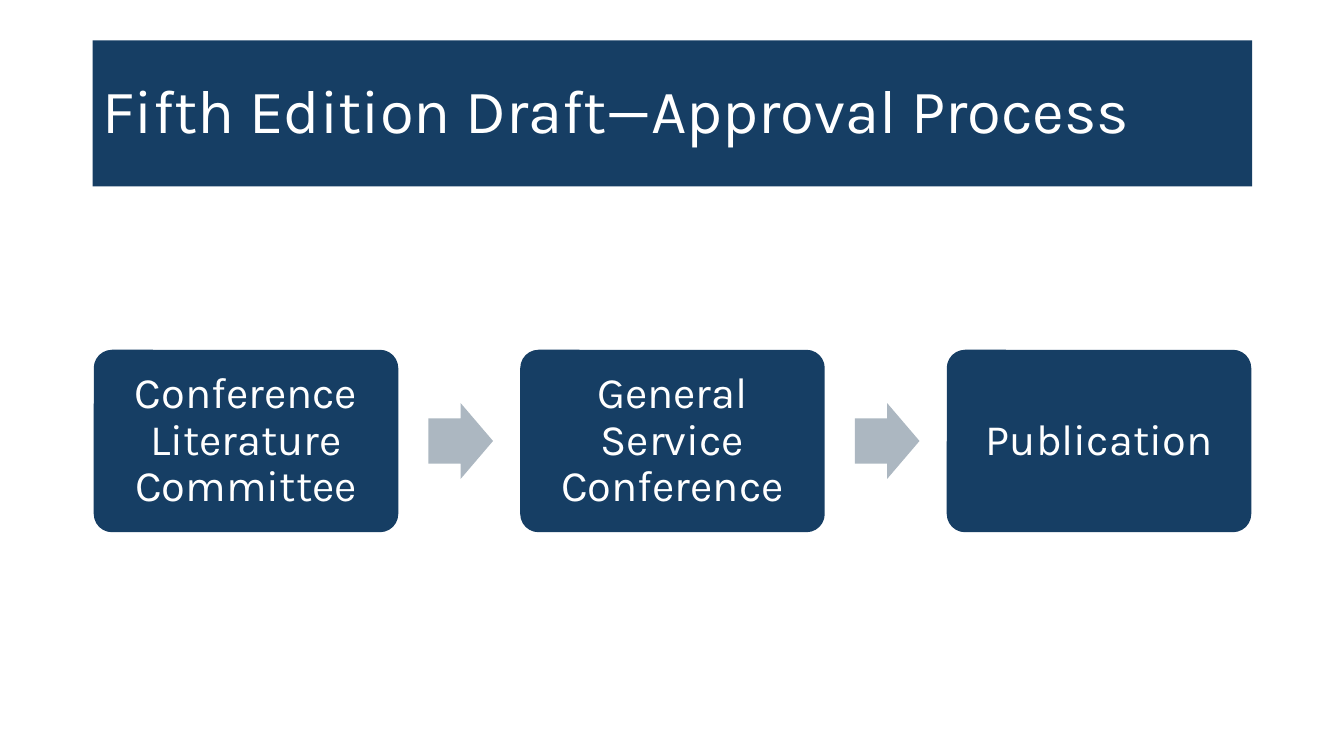
from dataclasses import dataclass

from pptx import Presentation
from pptx.dml.color import RGBColor
from pptx.enum.shapes import MSO_SHAPE
from pptx.enum.text import MSO_ANCHOR, PP_ALIGN
from pptx.util import Emu, Pt

RECT, ROUNDED, ARROW = MSO_SHAPE.RECTANGLE, MSO_SHAPE.ROUNDED_RECTANGLE, MSO_SHAPE.RIGHT_ARROW
LEFT, CENTER = PP_ALIGN.LEFT, PP_ALIGN.CENTER
MIDDLE = MSO_ANCHOR.MIDDLE

# Content
HEADING = "Fifth Edition Draft—Approval Process"
STAGES = ["Conference Literature Committee", "General Service Conference", "Publication"]

# Layout in px, 100 px to the inch
PX = 9144
SLIDE_W, SLIDE_H = 1333, 750
HEADING_BOX = (92, 40, 1150, 145)
STAGE_X, STAGE_Y, STAGE_W, STAGE_H = 93, 347, 302, 181
STAGE_STEP = 423
ARROW_W, ARROW_H, ARROW_GAP = 64, 75, 30


@dataclass(frozen=True)
class Theme:
    navy: str = "163E64"
    gray: str = "ACB7C1"
    white: str = "FFFFFF"
    font: str = "Karla"
    heading_size: int = 44
    stage_size: int = 31


THEME = Theme()


def add_block(slide, kind, box, fill, adjustments=()):
    block = slide.shapes.add_shape(kind, *(Emu(v * PX) for v in box))
    block.shadow.inherit = False
    block.fill.solid()
    block.fill.fore_color.rgb = RGBColor.from_string(fill)
    block.line.fill.background()
    for i, value in enumerate(adjustments):
        block.adjustments[i] = value
    return block


def write(block, text, *, size, align, inset_x, inset_y):
    frame = block.text_frame
    frame.word_wrap = True
    frame.vertical_anchor = MIDDLE
    frame.margin_left = frame.margin_right = Emu(inset_x * PX)
    frame.margin_top = frame.margin_bottom = Emu(inset_y * PX)
    paragraph = frame.paragraphs[0]
    paragraph.alignment = align
    paragraph.line_spacing = 0.9
    run = paragraph.add_run()
    run.text = text
    run.font.name = THEME.font
    run.font.size = Pt(size)
    run.font.color.rgb = RGBColor.from_string(THEME.white)


def main():
    prs = Presentation()
    prs.slide_width, prs.slide_height = Emu(SLIDE_W * PX), Emu(SLIDE_H * PX)
    slide = prs.slides.add_slide(prs.slide_layouts[6])

    # Heading band
    heading = add_block(slide, RECT, HEADING_BOX, THEME.navy)
    write(heading, HEADING, size=THEME.heading_size, align=LEFT, inset_x=10, inset_y=5)

    # Approval stages, with an arrow before every stage but the first
    arrow_y = STAGE_Y + (STAGE_H - ARROW_H) // 2
    for i, label in enumerate(STAGES):
        x = STAGE_X + i * STAGE_STEP
        if i:
            arrow_x = x - STAGE_STEP + STAGE_W + ARROW_GAP
            add_block(slide, ARROW, (arrow_x, arrow_y, ARROW_W, ARROW_H), THEME.gray, (0.6, 0.5))
        stage = add_block(slide, ROUNDED, (x, STAGE_Y, STAGE_W, STAGE_H), THEME.navy, (0.1,))
        write(stage, label, size=THEME.stage_size, align=CENTER, inset_x=13, inset_y=13)

    prs.save("out.pptx")


if __name__ == "__main__":
    main()
